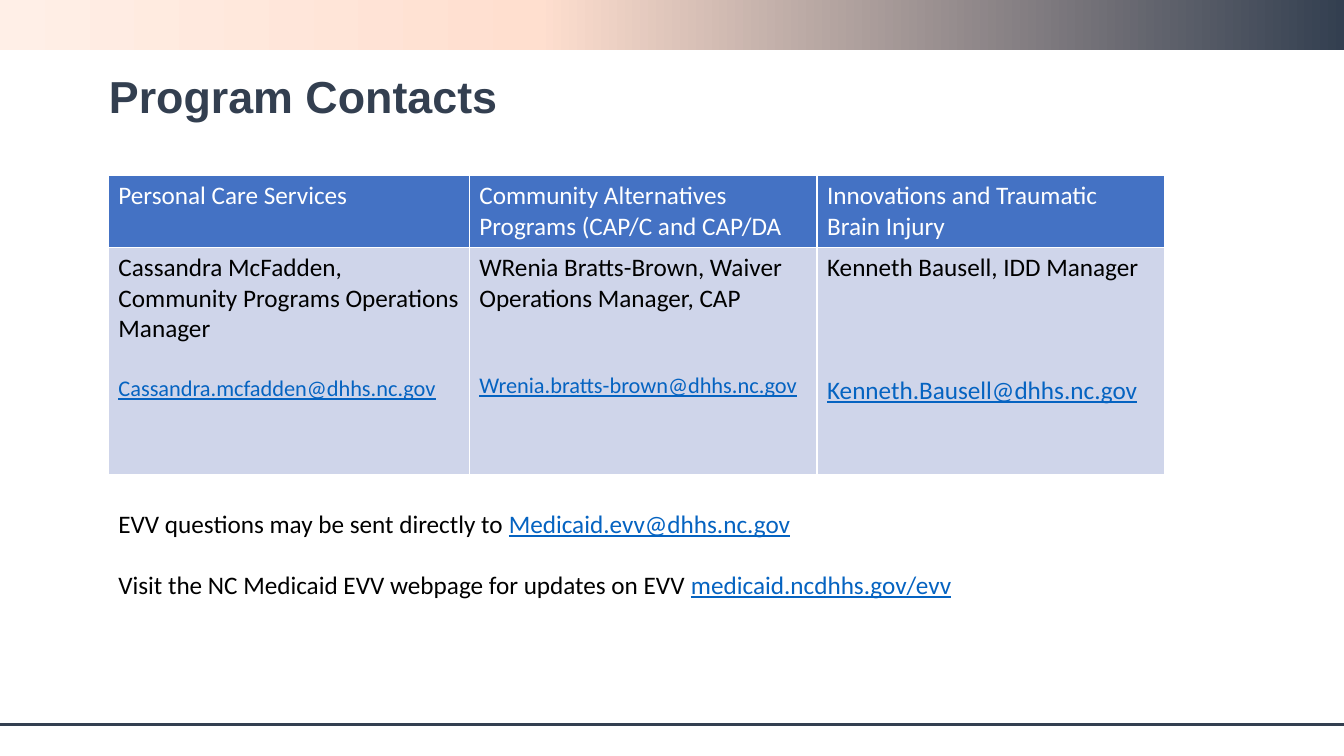
import pptx
import pptx.dml.color
import pptx.enum.shapes
import pptx.enum.text
import pptx.oxml
import pptx.oxml.ns
import pptx.util

Pt = pptx.util.Pt
RGBColor = pptx.dml.color.RGBColor

NAVY = RGBColor(0x33, 0x3F, 0x50)
PEACH = RGBColor(0xFF, 0xDF, 0xCF)
CREAM = RGBColor(0xFF, 0xEF, 0xE7)
BLUE = RGBColor(0x44, 0x72, 0xC4)
PALE_BLUE = RGBColor(0xCF, 0xD5, 0xEA)
LINK = RGBColor(0x05, 0x63, 0xC1)
WHITE = RGBColor(0xFF, 0xFF, 0xFF)
BLACK = RGBColor(0, 0, 0)
NS = pptx.oxml.ns.nsdecls("a")


def add_run(p, text, size, color, font="Calibri", bold=False, underline=False):
    r = p.add_run()
    r.text = text
    r.font.name = font
    r.font.size = Pt(size)
    r.font.bold = bold
    r.font.underline = underline
    r.font.color.rgb = color


def style_cell(cell, color):
    """Fill the cell and give it thin white borders."""
    tc_pr = cell._tc.get_or_add_tcPr()
    for side in ("lnL", "lnR", "lnT", "lnB"):
        tc_pr.append(pptx.oxml.parse_xml(
            f'<a:{side} {NS} w="12700"><a:solidFill><a:srgbClr val="{WHITE}"/>'
            f'</a:solidFill></a:{side}>'))
    cell.fill.solid()
    cell.fill.fore_color.rgb = color


prs = pptx.Presentation()
prs.slide_width = Pt(960)
prs.slide_height = Pt(540)
s = prs.slides.add_slide(prs.slide_layouts[5])

# Top band and bottom rule
band = s.shapes.add_shape(
    pptx.enum.shapes.MSO_SHAPE.RECTANGLE, 0, 0, prs.slide_width, Pt(36))
band.shadow.inherit = False
band.line.fill.background()
band.fill.gradient()
band.fill.gradient_angle = 180
stops = band._element.spPr.find(".//" + pptx.oxml.ns.qn("a:gsLst"))
for stop in list(stops):
    stops.remove(stop)
for position, color in ((0, NAVY), (60, PEACH), (100, CREAM)):
    stops.append(pptx.oxml.parse_xml(
        f'<a:gs {NS} pos="{position * 1000}"><a:srgbClr val="{color}"/></a:gs>'))

rule = s.shapes.add_connector(
    pptx.enum.shapes.MSO_CONNECTOR.STRAIGHT, 0, Pt(517.5), prs.slide_width, Pt(517.5))
rule.line.color.rgb = NAVY
rule.line.width = Pt(1.75)
rule._element.spPr.append(pptx.oxml.parse_xml(f"<a:effectLst {NS}/>"))

# Title
title = s.shapes.title
title.left, title.top, title.width, title.height = Pt(70.6), Pt(49), Pt(823.7), Pt(43.2)
tf = title.text_frame
tf.word_wrap = True
tf.auto_size = pptx.enum.text.MSO_AUTO_SIZE.NONE
tf.vertical_anchor = pptx.enum.text.MSO_ANCHOR.MIDDLE
p = tf.paragraphs[0]
p.alignment = pptx.enum.text.PP_ALIGN.LEFT
p.line_spacing = 0.9
add_run(p, "Program Contacts", 32, NAVY, font="Arial", bold=True)

# Contacts: program, person, e-mail, e-mail size, gap above e-mail, column width
contacts = [
    ("Personal Care Services",
     "Cassandra McFadden, Community Programs Operations Manager",
     "Cassandra.mcfadden@dhhs.nc.gov", 16, 22, 257.8),
    ("Community Alternatives Programs (CAP/C and CAP/DA",
     "WRenia Bratts-Brown, Waiver Operations Manager, CAP",
     "Wrenia.bratts-brown@dhhs.nc.gov", 16, 41.5, 248.4),
    ("Innovations and Traumatic Brain Injury",
     "Kenneth Bausell, IDD Manager",
     "Kenneth.Bausell@dhhs.nc.gov", 18, 66, 248.4),
]
table = s.shapes.add_table(
    2, len(contacts), Pt(77.4), Pt(125.5), Pt(754.6), Pt(212.4)).table
table.rows[0].height = Pt(50.4)
table.rows[1].height = Pt(162)
for col, (program, person, email, size, gap, width) in enumerate(contacts):
    table.columns[col].width = Pt(width)
    head, body = table.cell(0, col), table.cell(1, col)
    style_cell(head, BLUE)
    style_cell(body, PALE_BLUE)
    add_run(head.text_frame.paragraphs[0], program, 18, WHITE)
    add_run(body.text_frame.paragraphs[0], person, 18, BLACK)
    p = body.text_frame.add_paragraph()
    p.space_before = Pt(gap)
    add_run(p, email, size, LINK, underline=True)

# Questions and updates
box = s.shapes.add_textbox(Pt(77.4), Pt(359.5), Pt(754.6), Pt(72.7))
tf = box.text_frame
tf.word_wrap = True
tf.auto_size = pptx.enum.text.MSO_AUTO_SIZE.SHAPE_TO_FIT_TEXT
p = tf.paragraphs[0]
add_run(p, "EVV questions may be sent directly to ", 18, BLACK)
add_run(p, "Medicaid.evv@dhhs.nc.gov", 18, LINK, underline=True)
p = tf.add_paragraph()
p.space_before = Pt(22)
add_run(p, "Visit the NC Medicaid EVV webpage for updates on EVV ", 18, BLACK)
add_run(p, "medicaid.ncdhhs.gov/evv", 18, LINK, underline=True)

prs.save("out.pptx")
